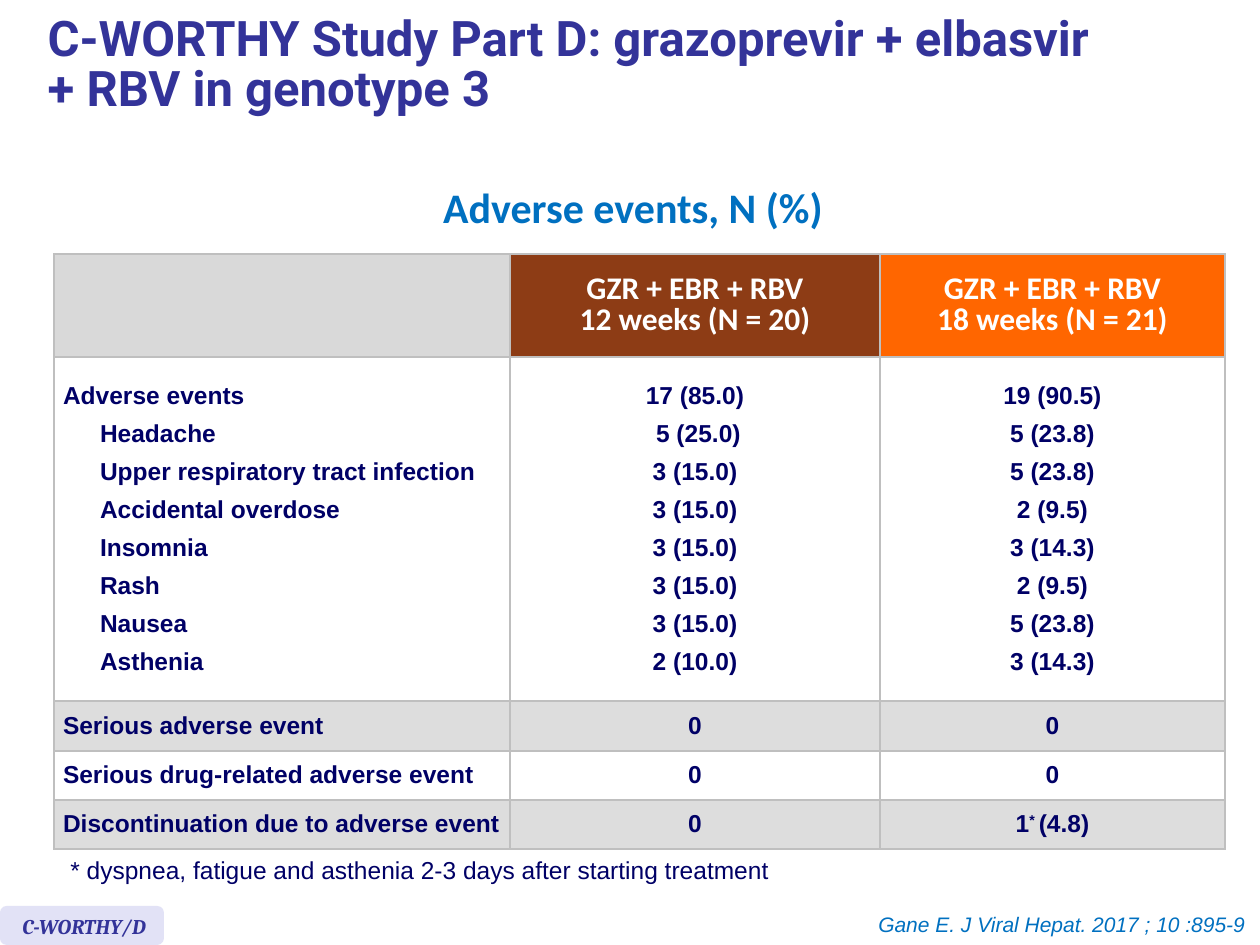
from dataclasses import dataclass
from pptx import Presentation
from pptx.dml.color import RGBColor
from pptx.enum.shapes import MSO_SHAPE as Shape
from pptx.enum.text import MSO_ANCHOR as Anchor, MSO_AUTO_SIZE as Fit, PP_ALIGN as Align
from pptx.oxml.ns import qn
from pptx.util import Pt
from lxml.etree import SubElement

# Content
TITLE = "C-WORTHY Study Part D: grazoprevir + elbasvir +\u00a0RBV in genotype 3"
HEADING = "Adverse events, N (%)"
HEADS = ["", "GZR + EBR + RBV\v12 weeks (N = 20)", "GZR + EBR + RBV\v18 weeks (N = 21)"]
EVENTS = [
    ("Adverse events", "17 (85.0)", "19 (90.5)"),
    ("Headache", " 5 (25.0)", "5 (23.8)"),
    ("Upper respiratory tract infection", "3 (15.0)", "5 (23.8)"),
    ("Accidental overdose", "3 (15.0)", "2 (9.5)"),
    ("Insomnia", "3 (15.0)", "3 (14.3)"),
    ("Rash", "3 (15.0)", "2 (9.5)"),
    ("Nausea", "3 (15.0)", "5 (23.8)"),
    ("Asthenia", "2 (10.0)", "3 (14.3)"),
]
# Each row is a list of lines; a "^" pair marks superscript
ROWS = [
    EVENTS,
    [("Serious adverse event", "0", "0")],
    [("Serious drug-related adverse event", "0", "0")],
    [("Discontinuation due to adverse event", "0", "1^* ^(4.8)")],
]
NOTE = "* dyspnea, fatigue and asthenia 2-3 days after starting treatment"
CITE = "Gane E. J Viral Hepat. 2017 ; 10 :895-9"
BADGE = "C-WORTHY/D"

# Sizes in px, 126 to the inch
SCALE = 914400 / 126
COLS = [456, 370, 345]
HIGHS = [103, 344, 50, 49, 49]


@dataclass(frozen=True)
class Theme:
    title: tuple = ("Roboto", 28, "333399", True, False)
    heading: tuple = ("Calibri", 24, "0070C0", True, False)
    head: tuple = ("Calibri", 18, "FFFFFF", True, False)
    body: tuple = ("Arial", 14, "000066", True, False)
    note: tuple = ("Arial", 14, "000066", False, False)
    cite: tuple = ("Arial", 12, "0070C0", False, True)
    badge: tuple = ("Cambria", 12, "333399", True, True)
    heads: tuple = ("D9D9D9", "8D3C15", "FF6600")
    bands: tuple = ("FFFFFF", "DDDDDD")
    line: str = "BFBFBF"
    tag: str = "E2E2F6"


THEME = Theme()


def px(n):
    return round(n * SCALE)


def box(*sides):
    return [px(n) for n in sides]


def style(part, look):
    font = part.font
    font.name, size, color, font.bold, font.italic = look
    font.size = Pt(size)
    font.color.rgb = RGBColor.from_string(color)


def write(shapes, text, look, place, align=Align.LEFT, wrap=True):
    frame = shapes.add_textbox(*box(*place)).text_frame
    frame.word_wrap = wrap
    frame.text = text
    para = frame.paragraphs[0]
    para.alignment = align
    style(para.runs[0], look)


def dress(cell, fill, side):
    """Fill, margins and a thin border on all four sides."""
    cell.vertical_anchor = Anchor.MIDDLE
    cell.margin_left = cell.margin_right = px(side)
    cell.margin_top = cell.margin_bottom = 0
    props = cell._tc.get_or_add_tcPr()
    for edge in ("a:lnL", "a:lnR", "a:lnT", "a:lnB"):
        line = SubElement(props, qn(edge), w=str(Pt(1)))
        solid = SubElement(line, qn("a:solidFill"))
        SubElement(solid, qn("a:srgbClr"), val=THEME.line)
    cell.fill.solid()
    cell.fill.fore_color.rgb = RGBColor.from_string(fill)


def fill_lines(cell, lines, first):
    frame = cell.text_frame
    for i, text in enumerate(lines):
        para = frame.add_paragraph() if i else frame.paragraphs[0]
        para.space_before = Pt(3 if i else 0)
        para.space_after = Pt(3)
        para.alignment = Align.LEFT if first else Align.CENTER
        if first and i:
            para.level = 1
            para._p.get_or_add_pPr().set("marL", str(px(37)))
        for k, piece in enumerate(text.split("^")):
            run = para.add_run()
            run.text = piece
            style(run, THEME.body)
            if k % 2:
                run._r.get_or_add_rPr().set("baseline", "30000")


deck = Presentation()
deck.slide_width, deck.slide_height = box(1260, 945)
slide = deck.slides.add_slide(deck.slide_layouts[5])
shapes = slide.shapes

# Title
title = shapes.title
title.left, title.top, title.width, title.height = box(35, 10, 1150, 135)
frame = title.text_frame
frame.text = TITLE
frame.auto_size = Fit.NONE
frame.vertical_anchor = Anchor.TOP
para = frame.paragraphs[0]
para.alignment = Align.LEFT
para.line_spacing = 0.85
style(para.runs[0], THEME.title)

# Table
place = box(54, 254, sum(COLS), sum(HIGHS))
table = shapes.add_table(len(HIGHS), len(COLS), *place).table
table.first_row = table.horz_banding = False
for col, wide in zip(table.columns, COLS):
    col.width = px(wide)
for row, high in zip(table.rows, HIGHS):
    row.height = px(high)
for c, (text, fill) in enumerate(zip(HEADS, THEME.heads)):
    cell = table.cell(0, c)
    dress(cell, fill, 13)
    cell.text_frame.text = text
    para = cell.text_frame.paragraphs[0]
    para.alignment = Align.CENTER
    para.line_spacing = 0.8
    for run in para.runs:
        style(run, THEME.head)
for r, lines in enumerate(ROWS):
    for c, texts in enumerate(zip(*lines)):
        cell = table.cell(r + 1, c)
        dress(cell, THEME.bands[r % 2], 9)
        fill_lines(cell, texts, c == 0)

# Heading, footnote and citation
write(shapes, HEADING, THEME.heading, (10, 175, 1246, 63), Align.CENTER)
write(shapes, NOTE, THEME.note, (58, 849, 731, 43), wrap=False)
write(shapes, CITE, THEME.cite, (690, 905, 568, 38), Align.RIGHT)

# Study badge
group = shapes.add_group_shape().shapes
tag = group.add_shape(Shape.ROUNDED_RECTANGLE, *box(0, 906, 164, 39))
tag.adjustments[0] = 0.17
tag.shadow.inherit = False
tag.fill.solid()
tag.fill.fore_color.rgb = RGBColor.from_string(THEME.tag)
tag.line.fill.background()
write(group, BADGE, THEME.badge, (10, 907, 174, 38))

deck.save("out.pptx")
